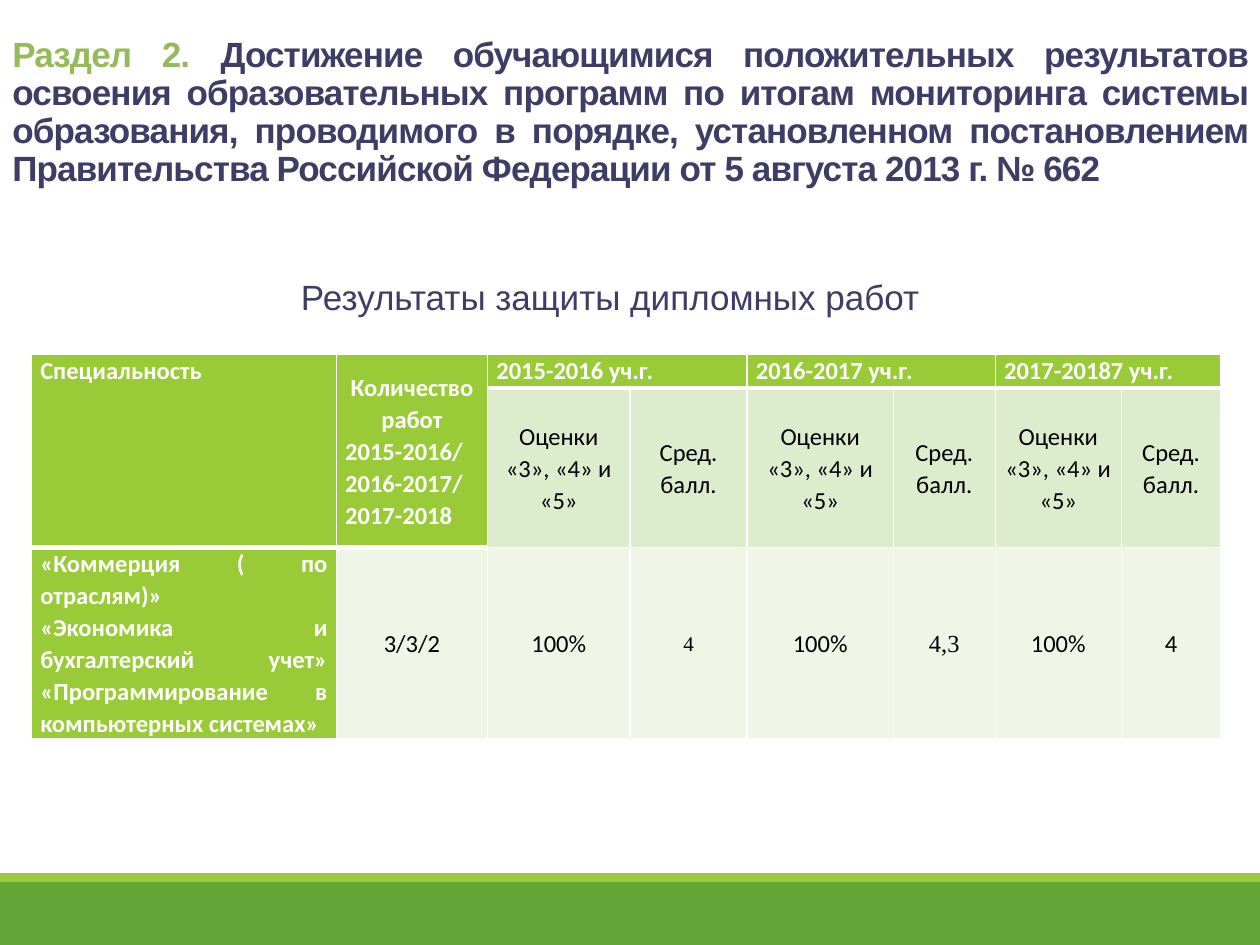
"""Build the slide with the results of diploma project defences."""
from dataclasses import dataclass

from lxml import etree
from pptx import Presentation
from pptx.dml.color import RGBColor
from pptx.enum import shapes, text
from pptx.oxml.ns import qn
from pptx.util import Inches, Pt


@dataclass(frozen=True)
class Theme:
    """Colours, fonts and type sizes of the slide."""
    footer: str = "63A537"
    accent: str = "99CB38"
    subheader: str = "DEECCE"
    body: str = "EFF6E8"
    white: str = "FFFFFF"
    black: str = "000000"
    ink: str = "00000A"
    section: str = "95BA59"
    heading: str = "3D3D66"
    heading_font: str = "Arial"
    table_font: str = "Calibri"
    serif_font: str = "Times New Roman"
    heading_size: int = 20
    table_size: int = 14
    small_size: int = 12


@dataclass
class CellText:
    """Wording and look of one table cell."""
    lines: list
    fill: str
    color: str
    bold: bool = False
    first: text.PP_ALIGN = text.PP_ALIGN.CENTER
    rest: text.PP_ALIGN = text.PP_ALIGN.JUSTIFY
    middle: bool = True
    font: str = Theme.table_font
    size: int = Theme.table_size


class SlideBuilder:
    """Draws elements on the current slide in one style."""

    def __init__(self, page, theme):
        self.page = page
        self.theme = theme

    def style(self, font, name, size, color, bold=False):
        """Apply typeface, size, colour and weight to a font."""
        font.name = name
        font.size = Pt(size)
        font.bold = bold
        font.color.rgb = RGBColor.from_string(color)

    def band(self, left, top, width, height, color):
        """Add a plain filled rectangle."""
        box = self.page.shapes.add_shape(
            shapes.MSO_SHAPE.RECTANGLE, Inches(left), Inches(top), Inches(width), Inches(height))
        box.shadow.inherit = False
        box.fill.solid()
        box.fill.fore_color.rgb = RGBColor.from_string(color)
        box.line.fill.background()

    def heading(self, left, top, width, height, parts, align, bold=False, tracking=0, spacing=1.0):
        """Add a text box whose single paragraph has coloured parts."""
        box = self.page.shapes.add_textbox(Inches(left), Inches(top), Inches(width), Inches(height))
        box.text_frame.word_wrap = True
        para = box.text_frame.paragraphs[0]
        para.alignment = align
        para.line_spacing = spacing
        for wording, color in parts:
            span = para.add_run()
            span.text = wording
            self.style(span.font, self.theme.heading_font, self.theme.heading_size, color, bold)
            if tracking:
                span._r.get_or_add_rPr().set("spc", str(int(tracking * 100)))

    def borders(self, cell, bottom):
        """Draw white cell borders with the given bottom width."""
        properties = cell._tc.get_or_add_tcPr()
        for side, width in (("L", 1), ("R", 1), ("T", 1), ("B", bottom)):
            line = etree.SubElement(properties, qn(f"a:ln{side}"), w=str(Pt(width)))
            fill = etree.SubElement(line, qn("a:solidFill"))
            etree.SubElement(fill, qn("a:srgbClr"), val=self.theme.white)

    def fill_cell(self, cell, content):
        """Write and format one table cell."""
        cell.fill.solid()
        cell.fill.fore_color.rgb = RGBColor.from_string(content.fill)
        cell.margin_left = cell.margin_right = Inches(0.07)
        cell.margin_top = cell.margin_bottom = 0
        cell.vertical_anchor = text.MSO_ANCHOR.MIDDLE if content.middle else text.MSO_ANCHOR.TOP
        cell.text_frame.text = "\n".join(content.lines)
        for index, para in enumerate(cell.text_frame.paragraphs):
            para.alignment = content.rest if index else content.first
            para.line_spacing = 1.07
            self.style(para.font, content.font, content.size, content.color, content.bold)

    def table(self, left, top, height, widths, heights, merges, contents):
        """Add a table with merged header cells."""
        frame = self.page.shapes.add_table(
            len(heights), len(widths), Inches(left), Inches(top), Inches(sum(widths)), Inches(height))
        grid = frame.table
        grid.first_row = grid.horz_banding = False
        for column, width in zip(grid.columns, widths):
            column.width = Inches(width)
        for row, row_height in zip(grid.rows, heights):
            row.height = Inches(row_height)
        frame.height = Inches(height)
        for start, end in merges:
            grid.cell(*start).merge(grid.cell(*end))
        for row in range(len(heights)):
            for column in range(len(widths)):
                cell = grid.cell(row, column)
                header = row == 0 or (row == 1 and column < 2)
                self.borders(cell, 3 if header else 1)
                if (row, column) in contents:
                    self.fill_cell(cell, contents[row, column])


def result_cells(theme):
    """Return the contents of the results table by row and column."""
    justify = text.PP_ALIGN.JUSTIFY

    def green(*lines, **look):
        return CellText(list(lines), theme.accent, theme.white, True, **look)

    def plain(wording, fill, color=theme.black, **look):
        return CellText([wording], fill, color, **look)

    cells = {
        (0, 0): green("Специальность", first=justify, middle=False),
        (0, 1): green("Количество работ", "2015-2016/", "2016-2017/", "2017-2018"),
        (2, 0): green("«Коммерция ( по отраслям)»",
                      "«Экономика и бухгалтерский учет» «Программирование в компьютерных системах»",
                      first=justify, middle=False),
        (2, 1): plain("3/3/2", theme.body),
    }
    serif = {"color": theme.ink, "font": theme.serif_font}
    years = [
        ("2015-2016 уч.г.", "4", {**serif, "size": theme.small_size}),
        ("2016-2017 уч.г.", "4,3", serif),
        ("2017-20187 уч.г.", "4", {}),
    ]
    for index, (year, average, look) in enumerate(years):
        column = 2 + 2 * index
        cells[0, column] = green(year, first=justify, middle=False)
        cells[1, column] = plain("Оценки «3», «4» и «5»", theme.subheader)
        cells[1, column + 1] = plain("Сред. балл.", theme.subheader)
        cells[2, column] = plain("100%", theme.body)
        cells[2, column + 1] = plain(average, theme.body, **look)
    return cells


def main():
    """Compose and save the slide."""
    deck = Presentation()
    deck.slide_width, deck.slide_height = Inches(10), Inches(7.5)
    theme = Theme()
    builder = SlideBuilder(deck.slides.add_slide(deck.slide_layouts[6]), theme)
    builder.band(0, 7, 10, 0.5, theme.footer)
    builder.band(0, 6.93, 10, 0.07, theme.accent)
    merges = [((0, column), (1, column)) for column in (0, 1)]
    merges += [((0, column), (0, column + 1)) for column in (2, 4, 6)]
    builder.table(0.25, 2.81, 3.13, [2.42, 1.2, 1.13, 0.93, 1.16, 0.81, 1, 0.79],
                  [0.27, 1.15, 1.13], merges, result_cells(theme))
    builder.heading(0, 0.25, 10, 1.07, [
        ("Раздел 2. ", theme.section),
        ("Достижение обучающимися положительных результатов освоения образовательных программ "
         "по итогам мониторинга системы образования, проводимого в порядке, установленном "
         "постановлением Правительства Российской Федерации от 5 августа 2013 г. № 662",
         theme.heading),
    ], text.PP_ALIGN.JUSTIFY, bold=True, tracking=-0.5, spacing=0.9)
    builder.heading(2.29, 2.14, 5.81, 0.44, [("Результаты защиты дипломных работ", theme.heading)],
                    text.PP_ALIGN.LEFT)
    deck.save("out.pptx")


if __name__ == "__main__":
    main()
